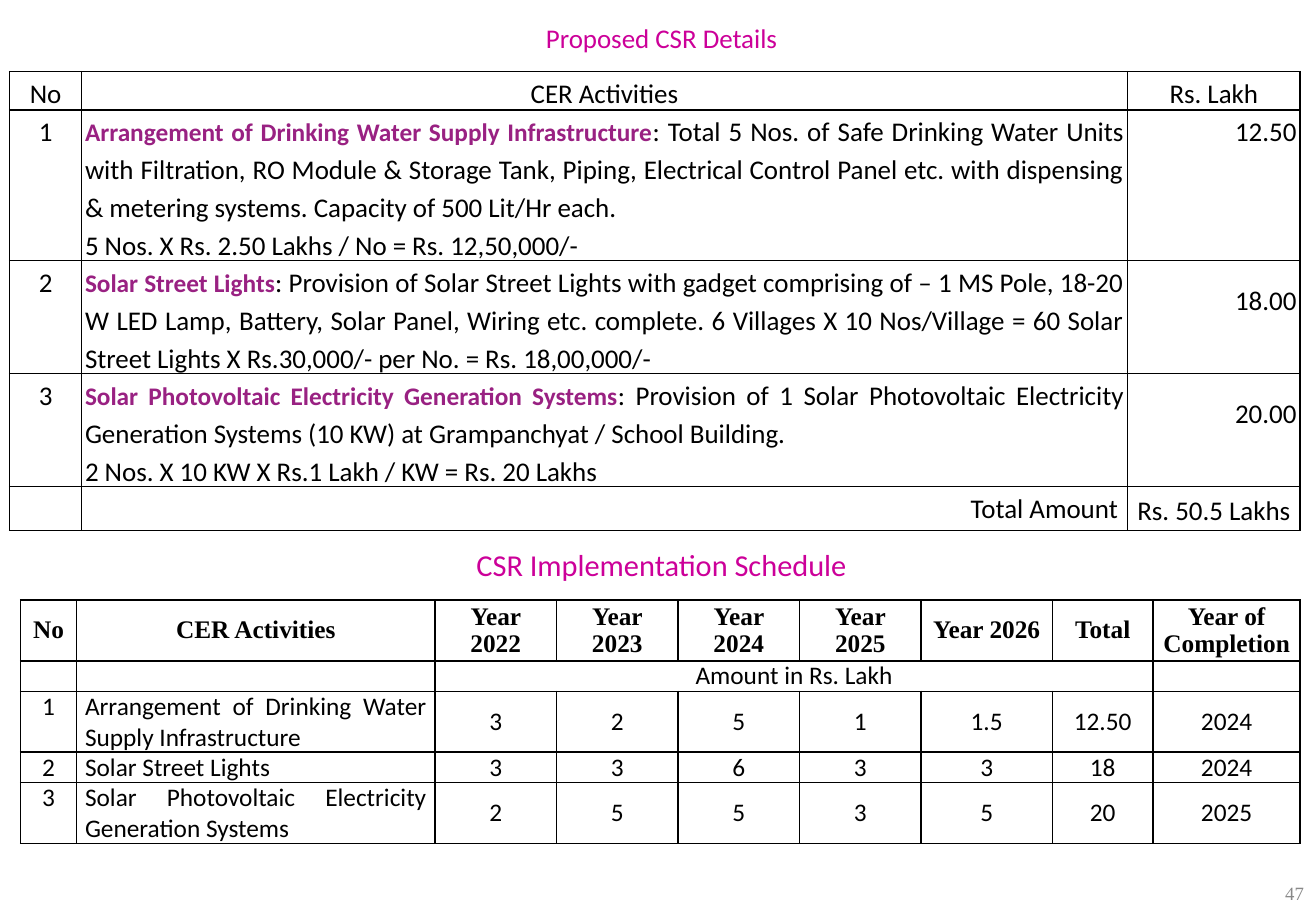
"""Build the slide with the CSR proposal and its yearly schedule."""
from lxml.etree import SubElement
from pptx import Presentation
from pptx.dml.color import RGBColor
from pptx.enum.text import MSO_ANCHOR, PP_ALIGN
from pptx.oxml.ns import qn
from pptx.util import Inches, Pt

LEFT, CENTER, RIGHT, JUSTIFY = PP_ALIGN.LEFT, PP_ALIGN.CENTER, PP_ALIGN.RIGHT, PP_ALIGN.JUSTIFY
TOP, MIDDLE = MSO_ANCHOR.TOP, MSO_ANCHOR.MIDDLE


def style(frame, size, align, color="000000", face="Calibri", bold=False, spacing=1.0):
    """Format every paragraph and run of a text frame."""
    for paragraph in frame.paragraphs:
        paragraph.alignment = align
        paragraph.line_spacing = spacing
        paragraph._p.get_or_add_endParaRPr().set("sz", str(int(size * 100)))
        for run in paragraph.runs:
            run.font.size, run.font.name, run.font.bold = Pt(size), face, bold
            run.font.color.rgb = RGBColor.from_string(color)


def ruled_table(slide, left, top, columns, rows, insets):
    """Add an unfilled table with thin black rules around all cells."""
    table = slide.shapes.add_table(len(rows), len(columns), Inches(left), Inches(top),
                                   Inches(sum(columns)), Inches(sum(rows))).table
    table.first_row = table.horz_banding = False
    for column, width in zip(table.columns, columns):
        column.width = Inches(width)
    for row, height in zip(table.rows, rows):
        row.height = Inches(height)
    for cell in table.iter_cells():
        cell.margin_left = cell.margin_right = Inches(insets[0])
        cell.margin_top, cell.margin_bottom = Inches(insets[1]), 0
        for side in ("a:lnL", "a:lnR", "a:lnT", "a:lnB"):
            rule = SubElement(cell._tc.get_or_add_tcPr(), qn(side), w=str(Pt(1)))
            SubElement(SubElement(rule, qn("a:solidFill")), qn("a:srgbClr"), val="000000")
        cell.fill.background()
    return table


presentation = Presentation()
presentation.slide_width, presentation.slide_height = Inches(10.83), Inches(7.5)
slide = presentation.slides.add_slide(presentation.slide_layouts[6])

captions = [
    ("47", (10.42, 7.17, 0.41, 0.37), 11.1, RIGHT, "898989", "Times New Roman", MIDDLE),
    ("Proposed CSR Details", (3.56, 0.13, 3.77, 0.37), 16, CENTER, "CC0099", "Calibri", TOP),
    ("CSR Implementation Schedule", (3.18, 4.45, 4.53, 0.4), 18, CENTER, "CC0099", "Calibri", MIDDLE),
]
for wording, place, size, align, color, face, anchor in captions:
    frame = slide.shapes.add_textbox(*map(Inches, place)).text_frame
    frame.word_wrap = True
    frame.vertical_anchor = anchor
    frame.text = wording
    style(frame, size, align, color, face)

schedule_rows = [
    ["No", "CER Activities", *(f"Year {year}" for year in range(2022, 2027)), "Total", "Year of Completion"],
    ["", "", "Amount in Rs. Lakh", "", "", "", "", "", ""],
    ["1", "Arrangement of Drinking Water Supply Infrastructure", "3", "2", "5", "1", "1.5", "12.50", "2024"],
    ["2", "Solar Street Lights", "3", "3", "6", "3", "3", "18", "2024"],
    ["3", "Solar Photovoltaic Electricity Generation Systems", "2", "5", "5", "3", "5", "20", "2025"],
]
schedule = ruled_table(slide, 0.17, 4.94, [0.46, 2.95, 1, 1, 1, 1, 1.08, 0.83, 1.21],
                       [0.5, 0.25, 0.5, 0.25, 0.5], (0.07, 0))
schedule.cell(1, 2).merge(schedule.cell(1, 7))
for r, values in enumerate(schedule_rows):
    for c, value in enumerate(values):
        cell = schedule.cell(r, c)
        cell.text_frame.text = value
        cell.vertical_anchor = MIDDLE if r == 0 or (r > 1 and c > 1) else TOP
        style(cell.text_frame, 15, JUSTIFY if r > 1 and c == 1 else CENTER,
              face="Calibri" if r else "Times New Roman", bold=r == 0)

proposal_rows = [
    ("No", "", ["CER Activities"], "Rs. Lakh"),
    ("1", "Arrangement of Drinking Water Supply Infrastructure",
     [": Total 5 Nos. of Safe Drinking Water Units with Filtration, RO Module & Storage Tank, Piping, "
      "Electrical Control Panel etc. with dispensing & metering systems. Capacity of 500 Lit/Hr each.",
      "5 Nos. X Rs. 2.50 Lakhs / No = Rs. 12,50,000/-"], "12.50"),
    ("2", "Solar Street Lights",
     [": Provision of Solar Street Lights with gadget comprising of – 1 MS Pole, 18-20 W LED Lamp, "
      "Battery, Solar Panel, Wiring etc. complete. 6 Villages X 10 Nos/Village = 60 Solar Street Lights "
      "X Rs.30,000/- per No. = Rs. 18,00,000/-"], "18.00"),
    ("3", "Solar Photovoltaic Electricity Generation Systems",
     [": Provision of 1 Solar Photovoltaic Electricity Generation Systems (10 KW) at Grampanchyat / "
      "School Building.", "2 Nos. X 10 KW X Rs.1 Lakh / KW = Rs. 20 Lakhs"], "20.00"),
    ("", "", ["Total Amount"], "Rs. 50.5 Lakhs"),
]
proposal = ruled_table(slide, 0.08, 0.59, [0.59, 8.61, 1.42], [0.31, 1.24, 0.93, 0.93, 0.36], (0.03, 0.01))
activity_aligns = [CENTER, JUSTIFY, JUSTIFY, JUSTIFY, RIGHT]
amount_aligns = [CENTER, RIGHT, RIGHT, RIGHT, CENTER]
for r, (number, activity, details, amount) in enumerate(proposal_rows):
    number_cell, activity_cell, amount_cell = proposal.rows[r].cells
    number_cell.text_frame.text = number
    style(number_cell.text_frame, 16, CENTER, spacing=1.15)

    opening = activity_cell.text_frame.paragraphs[0]
    if activity:
        opening.add_run().text = activity
    opening.add_run().text = details[0]
    for detail in details[1:]:
        activity_cell.text_frame.add_paragraph().text = detail
    style(activity_cell.text_frame, 16, activity_aligns[r], spacing=1.15)
    if activity:
        lead = opening.runs[0].font
        lead.size, lead.bold, lead.color.rgb = Pt(15), True, RGBColor.from_string("992182")

    amount_cell.text_frame.text = amount
    amount_cell.vertical_anchor = MIDDLE if r > 1 else TOP
    style(amount_cell.text_frame, 16, amount_aligns[r], spacing=1.15)
    if r in (2, 3):
        amount_cell.margin_bottom = Inches(0.31)
proposal.cell(4, 1).margin_right = Inches(0.08)

presentation.save("out.pptx")
